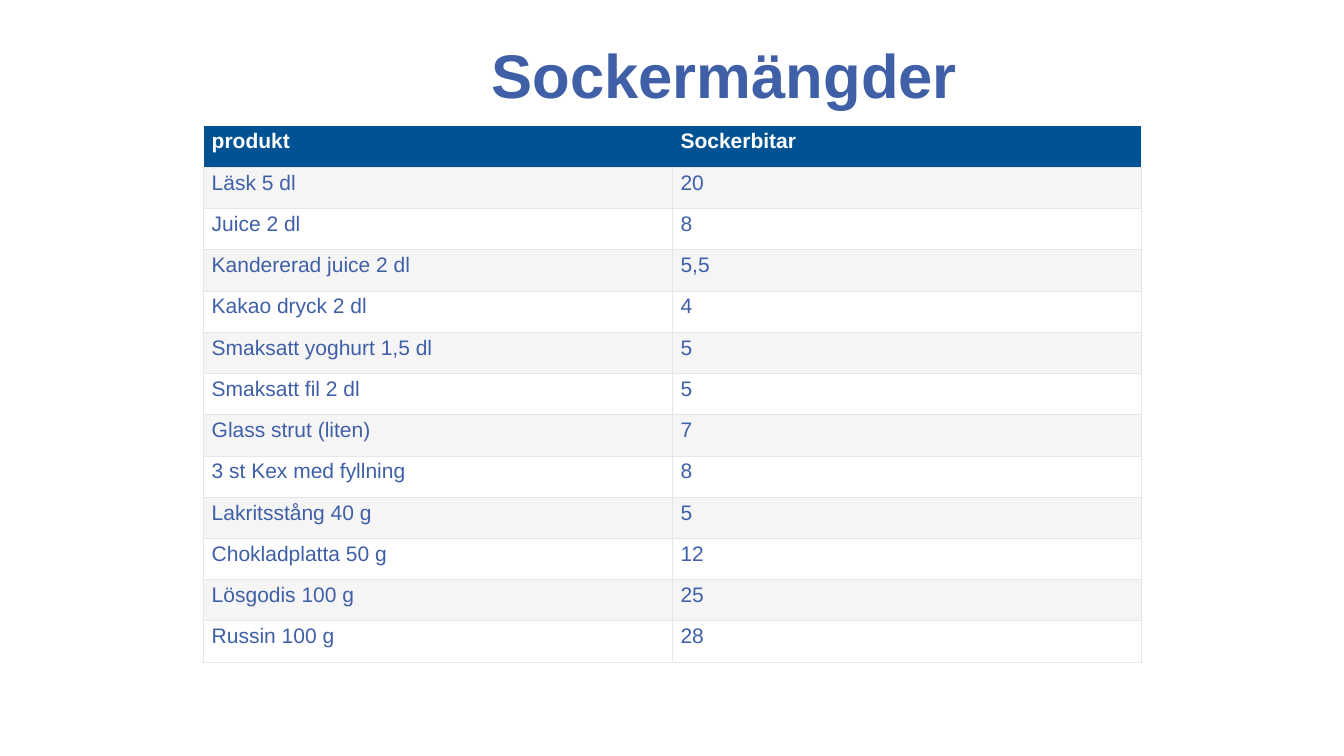
from dataclasses import dataclass

from lxml import etree
from pptx import Presentation
from pptx import util as u
from pptx.dml.color import RGBColor
from pptx.enum import text
from pptx.oxml import ns


@dataclass(frozen=True)
class Theme:
    """Colours, font and type sizes of the slide."""
    ink: str = "3F5FA7"
    head: str = "005293"
    band: str = "F5F5F5"
    white: str = "FFFFFF"
    rule: str = "E6E6E6"
    face: str = "Arial"
    title: float = 44
    body: float = 15


T = Theme()
WIDE, HIGH = 13.33, 7.5
ROWS = [
    ("produkt", "Sockerbitar"),
    ("Läsk 5 dl", "20"),
    ("Juice 2 dl", "8"),
    ("Kandererad juice 2 dl", "5,5"),
    ("Kakao dryck 2 dl", "4"),
    ("Smaksatt yoghurt 1,5 dl", "5"),
    ("Smaksatt fil 2 dl", "5"),
    ("Glass strut (liten)", "7"),
    ("3 st Kex med fyllning", "8"),
    ("Lakritsstång 40 g", "5"),
    ("Chokladplatta 50 g", "12"),
    ("Lösgodis 100 g", "25"),
    ("Russin 100 g", "28"),
]


def style(para, size, color, bold):
    """Set the font of a paragraph."""
    font = para.font
    font.name, font.size, font.bold = T.face, u.Pt(size), bold
    font.color.rgb = RGBColor.from_string(color)


def border(cell, sides):
    """Draw thin rules on the given sides and clear the others."""
    props = cell._tc.get_or_add_tcPr()
    for side in "LRTB":
        line = etree.SubElement(props, ns.qn(f"a:ln{side}"), w=str(u.Pt(0.5)))
        if side in sides:
            fill = etree.SubElement(line, ns.qn("a:solidFill"))
            etree.SubElement(fill, ns.qn("a:srgbClr"), val=T.rule)
        else:
            etree.SubElement(line, ns.qn("a:noFill"))


def heading(slide, words, box):
    """Place the title in its box, set in from the left."""
    shape = slide.shapes.title
    shape.left, shape.top, shape.width, shape.height = map(u.Inches, box)
    frame = shape.text_frame
    frame.text = words
    frame.auto_size = text.MSO_AUTO_SIZE.NONE
    frame.vertical_anchor = text.MSO_ANCHOR.MIDDLE
    frame.margin_left = u.Inches(box[2] * 0.344)
    para = frame.paragraphs[0]
    para.alignment = text.PP_ALIGN.LEFT
    para.line_spacing = 0.9
    style(para, T.title, T.ink, True)


def grid(slide, rows, box):
    """Fill the box with a banded table of equal rows and columns."""
    table = slide.shapes.add_table(
        len(rows), len(rows[0]), *map(u.Inches, box)).table
    for row in table.rows:
        row.height = u.Inches(box[3] / len(rows))
    for r, row in enumerate(rows):
        head = r == 0
        fill = T.head if head else T.band if r % 2 else T.white
        for c, words in enumerate(row):
            cell = table.cell(r, c)
            cell.text = words
            cell.margin_left = cell.margin_right = u.Inches(0.08)
            cell.margin_top = cell.margin_bottom = u.Inches(0.04)
            border(cell, "B" if head else "LRTB")
            cell.fill.solid()
            cell.fill.fore_color.rgb = RGBColor.from_string(fill)
            style(cell.text_frame.paragraphs[0], T.body,
                  T.white if head else T.ink, head)


def main():
    """Build and save the slide."""
    deck = Presentation()
    deck.slide_width, deck.slide_height = u.Inches(WIDE), u.Inches(HIGH)
    slide = deck.slides.add_slide(deck.slide_layouts[5])
    heading(slide, "Sockermängder", (0.92, 0.31, 11.5, 0.94))
    grid(slide, ROWS, (2.02, HIGH / 6, 9.3, 5.32))
    deck.save("out.pptx")


if __name__ == "__main__":
    main()
